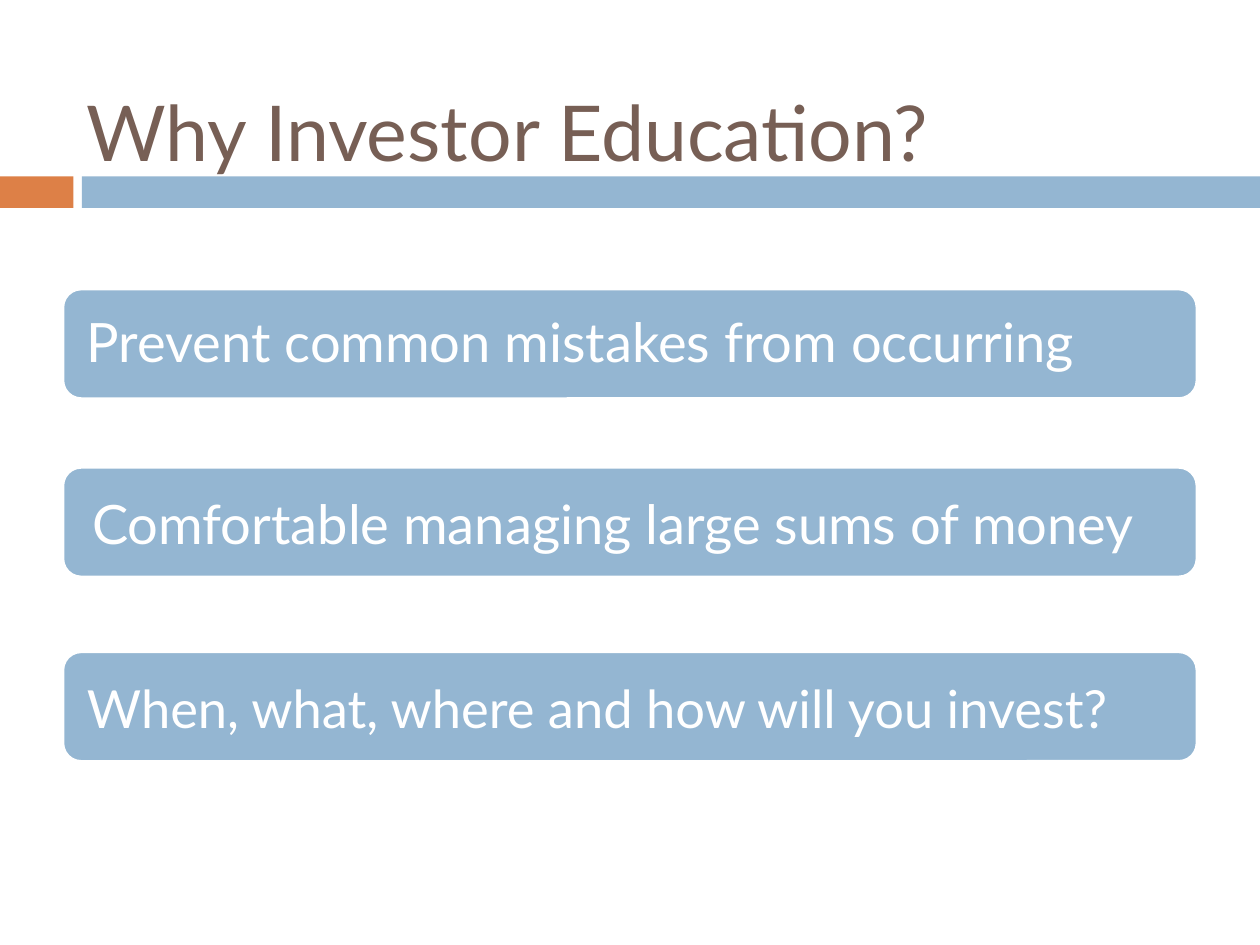
"""Build the investor education slide."""
import pptx
import pptx.util
import pptx.dml.color
import pptx.enum.shapes
import pptx.enum.text

Pt = pptx.util.Pt
Shape = pptx.enum.shapes.MSO_SHAPE

COLORS = {"orange": "DD8047", "blue": "94B6D2", "brown": "775F55", "white": "FFFFFF"}
FONT = "Lato"
TITLE = "Why Investor Education?"
BARS = [(0, 42, "orange"), (46.8, 673.2, "blue")]
BAR_TOP, BAR_HEIGHT = 100.8, 18
REASONS = [
    ("Prevent common mistakes from occurring", 31, 165.2, 2.9, 3.4),
    ("Comfortable managing large sums of money", 31, 267.1, 5.8, 5.7),
    ("When, what, where and how will you invest?", 30, 372.5, 2.9, 5.7),
]
CARD_LEFT, CARD_WIDTH, CARD_HEIGHT = 36, 648, 62.6
LABEL_WIDTH, LABEL_HEIGHT, INSET = 641.8, 56.6, 10.8


def color(name):
    return pptx.dml.color.RGBColor.from_string(COLORS[name])


def add_block(shapes, kind, place, fill):
    block = shapes.add_shape(kind, *map(Pt, place))
    block.shadow.inherit = False
    block.fill.solid()
    block.fill.fore_color.rgb = color(fill)
    block.line.fill.background()
    return block


def write(frame, text, size, ink):
    frame.word_wrap = True
    frame.auto_size = pptx.enum.text.MSO_AUTO_SIZE.NONE
    frame.vertical_anchor = pptx.enum.text.MSO_ANCHOR.MIDDLE
    frame.text = text
    para = frame.paragraphs[0]
    para.alignment = pptx.enum.text.PP_ALIGN.LEFT
    para.font.name = FONT
    para.font.size = Pt(size)
    para.font.color.rgb = color(ink)
    return para


def add_reason(page, text, size, top, shift_x, shift_y):
    group = page.shapes.add_group_shape()
    place = (CARD_LEFT, top, CARD_WIDTH, CARD_HEIGHT)
    card = add_block(group.shapes, Shape.ROUNDED_RECTANGLE, place, "blue")
    card.line.color.rgb = color("white")
    card.line.width = Pt(1.5)
    place = (CARD_LEFT + shift_x, top + shift_y, LABEL_WIDTH, LABEL_HEIGHT)
    frame = group.shapes.add_textbox(*map(Pt, place)).text_frame
    frame.margin_left = frame.margin_right = Pt(INSET)
    frame.margin_top = frame.margin_bottom = Pt(INSET)
    write(frame, text, size, "white").line_spacing = 0.9


def main():
    deck = pptx.Presentation()
    deck.slide_width, deck.slide_height = Pt(720), Pt(540)
    page = deck.slides.add_slide(deck.slide_layouts[5])
    title = page.shapes.title
    title.left, title.top, title.width, title.height = map(Pt, (42, 36, 642, 77.8))
    write(title.text_frame, TITLE, 44, "brown")
    for left, width, fill in BARS:
        place = (left, BAR_TOP, width, BAR_HEIGHT)
        bar = add_block(page.shapes, Shape.RECTANGLE, place, fill)
        title.element.addprevious(bar.element)
    for reason in REASONS:
        add_reason(page, *reason)
    deck.save("out.pptx")


if __name__ == "__main__":
    main()
